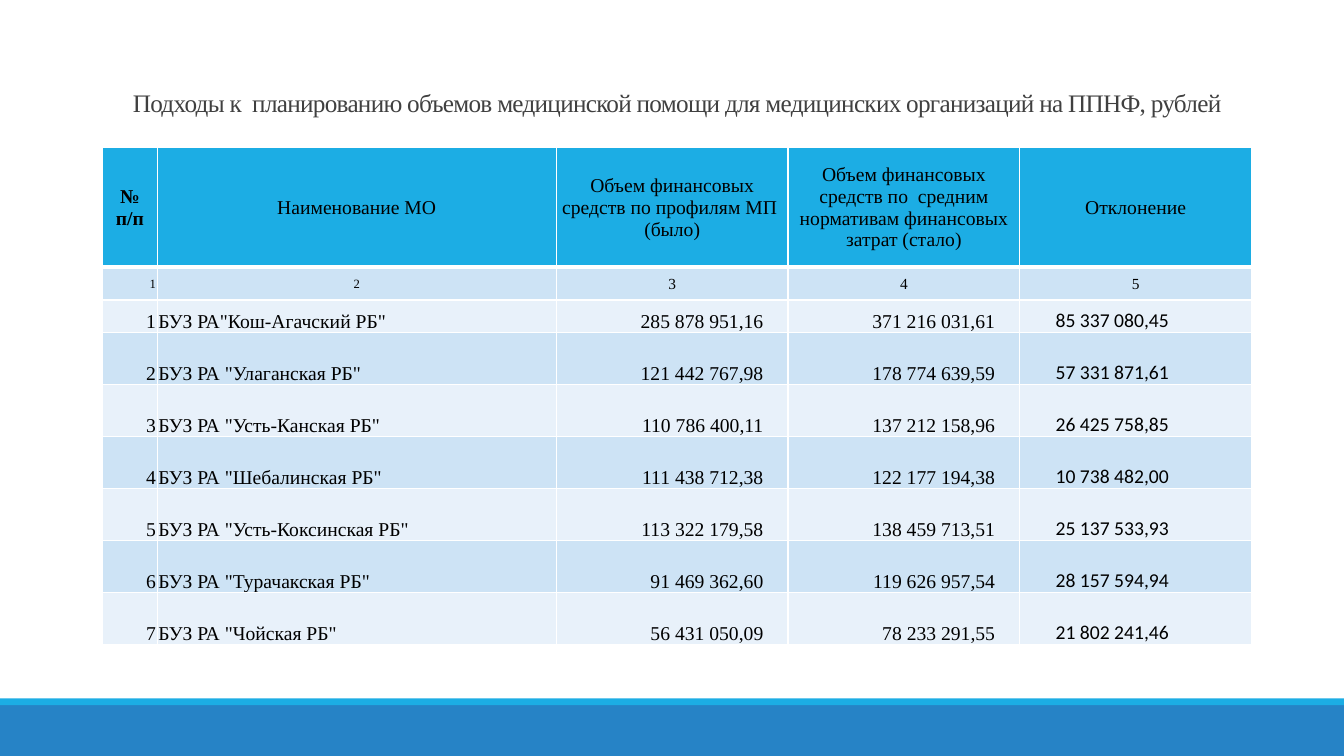
from lxml.etree import SubElement, Element
from pptx import Presentation
from pptx.dml.color import RGBColor
from pptx.enum.shapes import MSO_SHAPE as Shape
from pptx.enum.text import MSO_ANCHOR as Anchor, PP_ALIGN as Align
from pptx.oxml.ns import qn
from pptx.util import Cm, Pt

SERIF = "Times New Roman"
SANS = "Calibri"
SLIDE_WIDTH, SLIDE_HEIGHT = 33.87, 19.05
COLUMN_WIDTHS = [1.37, 10.06, 5.84, 5.84, 5.84]
ROW_HEIGHTS = [3.0, 0.84, 0.82] + [1.31] * 6
BAND_FILLS = ["E8F1FA", "CDE3F5"]
TITLE = "Подходы к  планированию объемов медицинской помощи для медицинских организаций на ППНФ, рублей"
HEADERS = [
    "№ п/п",
    "Наименование МО",
    "Объем финансовых средств по профилям МП  (было)",
    "Объем финансовых средств по  средним нормативам финансовых затрат (стало)",
    "Отклонение",
]
HOSPITALS = [
    ('БУЗ РА"Кош-Агачский РБ"', "285 878 951,16", "371 216 031,61", "85 337 080,45"),
    ('БУЗ РА "Улаганская РБ"', "121 442 767,98", "178 774 639,59", "57 331 871,61"),
    ('БУЗ РА "Усть-Канская РБ"', "110 786 400,11", "137 212 158,96", "26 425 758,85"),
    ('БУЗ РА "Шебалинская РБ"', "111 438 712,38", "122 177 194,38", "10 738 482,00"),
    ('БУЗ РА "Усть-Коксинская РБ"', "113 322 179,58", "138 459 713,51", "25 137 533,93"),
    ('БУЗ РА "Турачакская РБ"', "91 469 362,60", "119 626 957,54", "28 157 594,94"),
    ('БУЗ РА "Чойская РБ"', "56 431 050,09", "78 233 291,55", "21 802 241,46"),
]


def paint(fill, color):
    """Give a fill a solid colour from a hex string."""
    fill.solid()
    fill.fore_color.rgb = RGBColor.from_string(color)


def write(frame, text, size=14, font=SERIF, color="000000", bold=False,
          align=Align.LEFT, line_spacing=1.0, tracking=0):
    """Write one formatted paragraph into a text frame."""
    paragraph = frame.paragraphs[0]
    paragraph.alignment = align
    paragraph.line_spacing = line_spacing
    run = paragraph.add_run()
    run.text = text
    run.font.name = font
    run.font.size = Pt(size)
    run.font.bold = bold
    paint(run.font.fill, color)
    if tracking:
        run._r.get_or_add_rPr().set("spc", str(int(tracking * 100)))


def add_borders(cell, top=1, bottom=1):
    """Draw white borders around a cell, with widths in points."""
    properties = cell._tc.get_or_add_tcPr()
    widths = {"a:lnL": 1, "a:lnR": 1, "a:lnT": top, "a:lnB": bottom}
    for position, (tag, width) in enumerate(widths.items()):
        line = Element(qn(tag), w=str(Pt(width)))
        SubElement(SubElement(line, qn("a:solidFill")), qn("a:srgbClr"), val="FFFFFF")
        properties.insert(position, line)


def fill_cell(cell, text, color, anchor=Anchor.MIDDLE, right=0.03, top=1, bottom=1, **text_format):
    """Set the text, fill, margins and borders of a table cell."""
    cell.margin_left = cell.margin_top = Cm(0.03)
    cell.margin_right, cell.margin_bottom = Cm(right), 0
    cell.vertical_anchor = anchor
    paint(cell.fill, color)
    add_borders(cell, top, bottom)
    write(cell.text_frame, text, **text_format)


def add_footer(slide, left, top, width, height):
    """Place the blue footer band with a lighter strip along its top."""
    strip = 0.17
    bands = [(top + strip, height - strip, "2683C6"), (top, strip, "1CADE4")]
    for band_top, band_height, color in bands:
        band = slide.shapes.add_shape(Shape.RECTANGLE, Cm(left), Cm(band_top), Cm(width), Cm(band_height))
        band.shadow.inherit = False
        band.line.fill.background()
        paint(band.fill, color)


def add_title(slide, left, top, width, height):
    """Place the centred slide title at the bottom of its box."""
    frame = slide.shapes.add_textbox(Cm(left), Cm(top), Cm(width), Cm(height)).text_frame
    frame.word_wrap = True
    frame.vertical_anchor = Anchor.BOTTOM
    write(frame, TITLE, size=18, color="404040", align=Align.CENTER, line_spacing=0.85, tracking=-0.5)


def add_funding_table(slide, left, top, width, height):
    """Place the table of funding by hospital."""
    table = slide.shapes.add_table(len(ROW_HEIGHTS), len(COLUMN_WIDTHS),
                                   Cm(left), Cm(top), Cm(width), Cm(height)).table
    for column, column_width in zip(table.columns, COLUMN_WIDTHS):
        column.width = Cm(column_width)
    for row, row_height in zip(table.rows, ROW_HEIGHTS):
        row.height = Cm(row_height)

    for index, header in enumerate(HEADERS):
        fill_cell(table.cell(0, index), header, "1CADE4", bottom=3, bold=index == 0, align=Align.CENTER)
        fill_cell(table.cell(1, index), str(index + 1), BAND_FILLS[1], top=3,
                  size=9 if index < 2 else 11, align=Align.CENTER if index else Align.RIGHT)

    amount = {"align": Align.RIGHT, "right": 0.62}
    formats = [{"align": Align.RIGHT}, {}, amount, amount,
               {"align": Align.RIGHT, "right": 2.08, "font": SANS}]
    for number, hospital in enumerate(HOSPITALS, 1):
        row = number + 1
        for index, text in enumerate((str(number), *hospital)):
            fill_cell(table.cell(row, index), text, BAND_FILLS[row % 2],
                      anchor=Anchor.BOTTOM, **formats[index])


def main():
    """Build the slide and save the presentation."""
    presentation = Presentation()
    presentation.slide_width, presentation.slide_height = Cm(SLIDE_WIDTH), Cm(SLIDE_HEIGHT)
    slide = presentation.slides.add_slide(presentation.slide_layouts[6])
    content_left, content_width = 2.59, sum(COLUMN_WIDTHS)
    add_footer(slide, 0, 17.6, SLIDE_WIDTH, SLIDE_HEIGHT - 17.6)
    add_title(slide, content_left, 1.02, content_width, 2.08)
    add_funding_table(slide, content_left, 3.72, content_width, sum(ROW_HEIGHTS))
    presentation.save("out.pptx")


if __name__ == "__main__":
    main()
